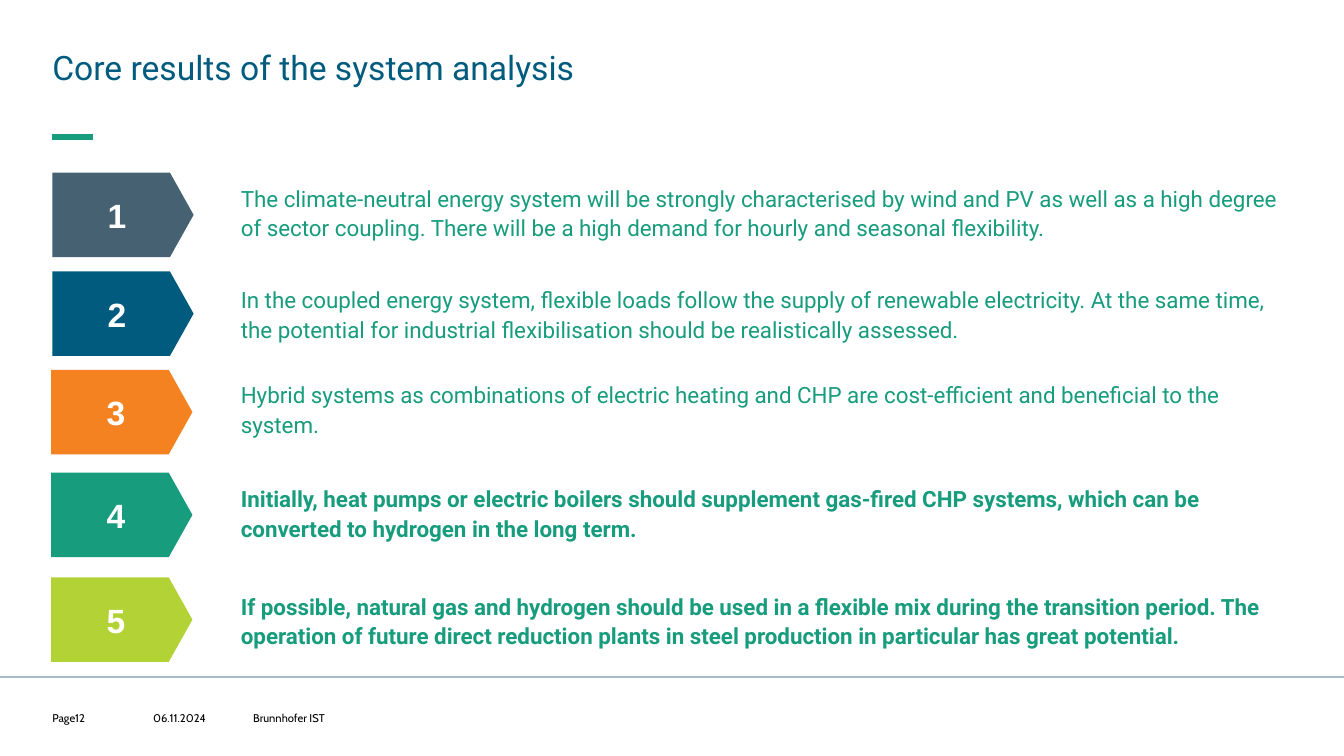
from dataclasses import dataclass

import pptx
import pptx.dml.color
import pptx.enum.shapes
import pptx.enum.text
import pptx.oxml
import pptx.oxml.ns
import pptx.presentation
import pptx.shapes.base
import pptx.slide
import pptx.util

Cm = pptx.util.Cm
ALIGN = pptx.enum.text.PP_ALIGN
ANCHOR = pptx.enum.text.MSO_ANCHOR


@dataclass(frozen=True)
class TextStyle:
    font: str
    size: float
    color: str
    bold: bool = False
    line_spacing: float = 1.0
    space_after: float = 0
    align: ALIGN = ALIGN.LEFT
    anchor: ANCHOR = ANCHOR.MIDDLE


@dataclass(frozen=True)
class Theme:
    green: str = "179C7D"
    blue: str = "005B7F"
    slate: str = "466171"
    orange: str = "F58220"
    lime: str = "B2D235"
    rule: str = "A6BBC8"
    title: TextStyle = TextStyle("Roboto", 24, "005B7F", line_spacing=1.1, anchor=ANCHOR.TOP)
    number: TextStyle = TextStyle("Arial", 24, "FFFFFF", bold=True, align=ALIGN.CENTER)
    result: TextStyle = TextStyle("Roboto", 16, "179C7D", line_spacing=1.1, space_after=19)
    key_result: TextStyle = TextStyle("Roboto", 16, "179C7D", True, 1.1, 19)
    footer: TextStyle = TextStyle("Cabin", 8, "000000")


@dataclass(frozen=True)
class Result:
    """One numbered finding; positions and widths are in centimetres."""
    color: str
    arrow_left: float
    arrow_top: float
    text_top: float
    text_width: float
    style: TextStyle
    text: str


@dataclass(frozen=True)
class FooterEntry:
    left: float
    width: float
    text: str


THEME = Theme()
SLIDE_WIDTH, SLIDE_HEIGHT = 33.87, 19.05
MARGIN = 1.32
ARROW_WIDTH, ARROW_HEIGHT, ARROW_POINT = 3.56, 2.13, 0.28
RESULT_LEFT, RESULT_HEIGHT = 6.07, 1.47
FOOTER_TOP, FOOTER_HEIGHT = 17.93, 0.33

RESULTS = [
    Result(THEME.slate, MARGIN, 4.35, 4.6, 26.47, THEME.result,
           "The climate-neutral energy system will be strongly characterised by wind and PV "
           "as well as a high degree of sector coupling. There will be a high demand for "
           "hourly and seasonal flexibility."),
    Result(THEME.blue, MARGIN, 6.84, 7.16, 26.47, THEME.result,
           "In the coupled energy system, flexible loads follow the supply of renewable "
           "electricity. At the same time, the potential for industrial flexibilisation "
           "should be realistically assessed."),
    Result(THEME.orange, 1.29, 9.32, 9.55, 26.01, THEME.result,
           "Hybrid systems as combinations of electric heating and CHP are cost-efficient "
           "and beneficial to the system."),
    Result(THEME.green, 1.29, 11.91, 12.17, 26.01, THEME.key_result,
           "Initially, heat pumps or electric boilers should supplement gas-fired CHP "
           "systems, which can be converted to hydrogen in the long term."),
    Result(THEME.lime, 1.29, 14.55, 14.88, 26.47, THEME.key_result,
           "If possible, natural gas and hydrogen should be used in a flexible mix during "
           "the transition period. The operation of future direct reduction plants in steel "
           "production in particular has great potential."),
]

FOOTER = [
    FooterEntry(MARGIN, 2.01, "Page12"),
    FooterEntry(3.86, 2.01, "06.11.2024"),
    FooterEntry(6.38, 8.2, "Brunnhofer IST"),
]


def rgb(color: str) -> pptx.dml.color.RGBColor:
    return pptx.dml.color.RGBColor.from_string(color)


def write(shape: pptx.shapes.base.BaseShape, text: str, style: TextStyle) -> None:
    frame = shape.text_frame
    frame.text = text
    frame.word_wrap = True
    frame.vertical_anchor = style.anchor
    paragraph = frame.paragraphs[0]
    paragraph.alignment = style.align
    paragraph.line_spacing = style.line_spacing
    paragraph.space_after = pptx.util.Pt(style.space_after)
    font = paragraph.runs[0].font
    font.name = style.font
    font.size = pptx.util.Pt(style.size)
    font.bold = style.bold
    font.color.rgb = rgb(style.color)


def add_text(slide: pptx.slide.Slide, left: float, top: float, width: float,
             height: float, text: str, style: TextStyle) -> None:
    box = slide.shapes.add_textbox(Cm(left), Cm(top), Cm(width), Cm(height))
    frame = box.text_frame
    frame.margin_left = frame.margin_right = frame.margin_top = frame.margin_bottom = 0
    write(box, text, style)


def add_rule(slide: pptx.slide.Slide, left: float, right: float, y: float,
             color: str, weight: float) -> None:
    rule = slide.shapes.add_connector(pptx.enum.shapes.MSO_CONNECTOR.STRAIGHT,
                                      Cm(left), Cm(y), Cm(right), Cm(y))
    rule.line.color.rgb = rgb(color)
    rule.line.width = pptx.util.Pt(weight)
    effects = pptx.oxml.parse_xml(f"<a:effectLst {pptx.oxml.ns.nsdecls('a')}/>")
    rule._element.spPr.append(effects)


def add_result(slide: pptx.slide.Slide, number: int, result: Result) -> None:
    arrow = slide.shapes.add_shape(pptx.enum.shapes.MSO_SHAPE.PENTAGON,
                                   Cm(result.arrow_left), Cm(result.arrow_top),
                                   Cm(ARROW_WIDTH), Cm(ARROW_HEIGHT))
    arrow.adjustments[0] = ARROW_POINT
    arrow.shadow.inherit = False
    arrow.fill.solid()
    arrow.fill.fore_color.rgb = rgb(result.color)
    arrow.line.fill.background()
    write(arrow, str(number), THEME.number)
    add_text(slide, RESULT_LEFT, result.text_top, result.text_width, RESULT_HEIGHT,
             result.text, result.style)


def main() -> None:
    deck: pptx.presentation.Presentation = pptx.Presentation()
    deck.slide_width, deck.slide_height = Cm(SLIDE_WIDTH), Cm(SLIDE_HEIGHT)
    slide = deck.slides.add_slide(deck.slide_layouts[6])

    # Title with accent bar, and the rule above the footer
    add_rule(slide, MARGIN, 2.34, 3.45, THEME.green, 4)
    add_rule(slide, 0, SLIDE_WIDTH, 17.07, THEME.rule, 1.5)
    add_text(slide, MARGIN, 1.09, 31.19, 1.07, "Core results of the system analysis", THEME.title)

    # Numbered results
    for number, result in enumerate(RESULTS, start=1):
        add_result(slide, number, result)

    # Footer
    for entry in FOOTER:
        add_text(slide, entry.left, FOOTER_TOP, entry.width, FOOTER_HEIGHT,
                 entry.text, THEME.footer)

    deck.save("out.pptx")


if __name__ == "__main__":
    main()
